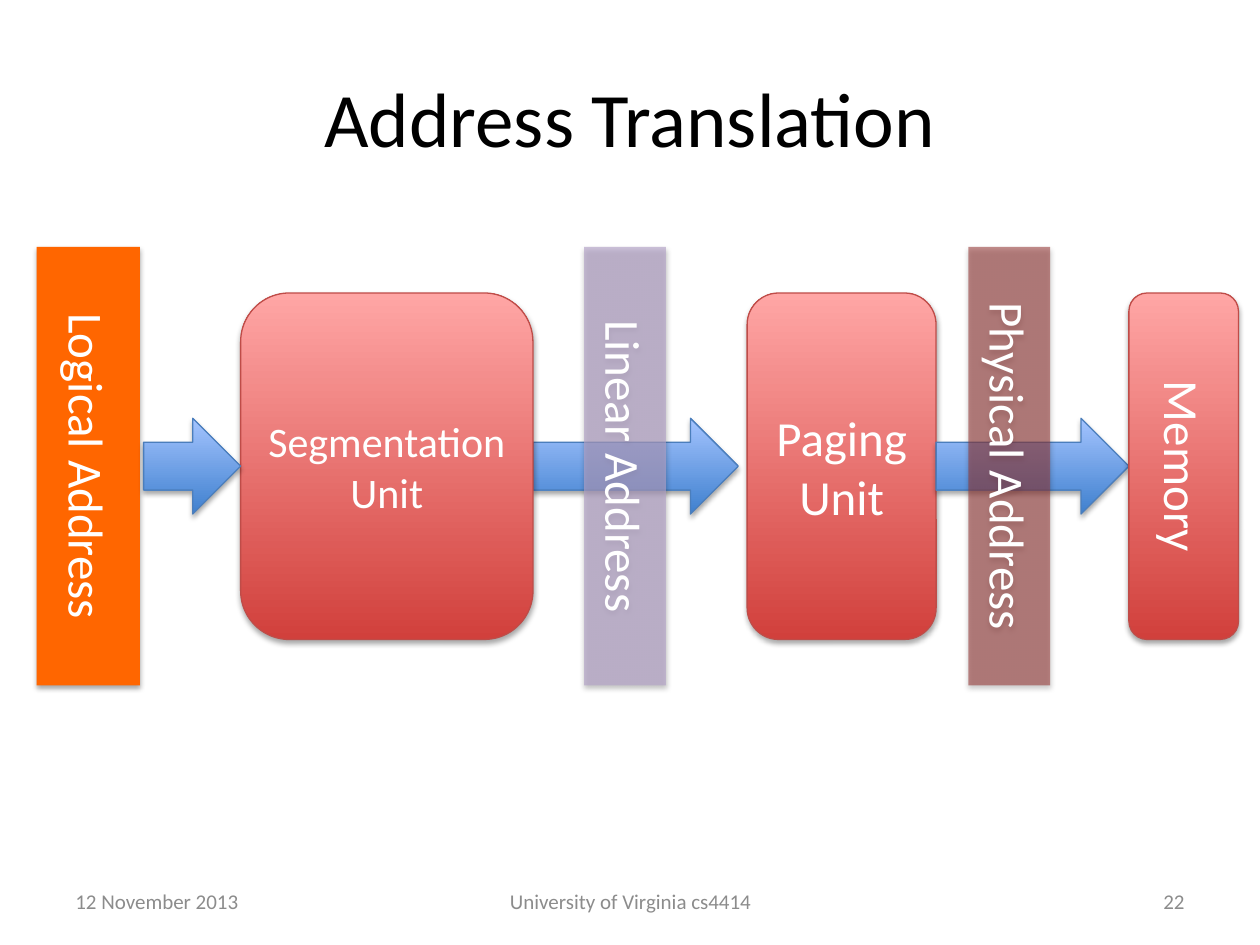
import pptx
import pptx.util
from lxml import etree
from pptx.dml.color import RGBColor
from pptx.enum.shapes import MSO_SHAPE
from pptx.enum.text import MSO_ANCHOR, PP_ALIGN
from pptx.oxml.ns import qn
from pptx.util import Inches, Pt

FONT = "Calibri"
BLACK = RGBColor(0x00, 0x00, 0x00)
WHITE = RGBColor(0xFF, 0xFF, 0xFF)
GREY = RGBColor(0x8C, 0x8C, 0x8C)
ORANGE = RGBColor(0xFF, 0x66, 0x00)
LILAC = RGBColor(0xB3, 0xA2, 0xC7)
MAROON = RGBColor(0x95, 0x37, 0x35)
BLUES = RGBColor(0x3F, 0x80, 0xCE), RGBColor(0xA4, 0xC4, 0xFF)
BLUE_EDGE = RGBColor(0x4B, 0x7E, 0xBC)
REDS = RGBColor(0xD1, 0x40, 0x3C), RGBColor(0xFF, 0xA6, 0xA5)
RED_EDGE = RGBColor(0xBF, 0x4C, 0x48)

MIDDLE = 3.7  # height of the line on which the whole diagram is centred


def write(shape, text, size, color, align=PP_ALIGN.CENTER):
    frame = shape.text_frame
    frame.word_wrap = True
    frame.vertical_anchor = MSO_ANCHOR.MIDDLE
    frame.text = text
    for para in frame.paragraphs:
        para.alignment = align
        para.font.name = FONT
        para.font.size = Pt(size)
        para.font.color.rgb = color


def add_shadow(shape):
    shape.shadow.inherit = False
    effects = shape._element.spPr.find(qn("a:effectLst"))
    shadow = etree.SubElement(
        effects, qn("a:outerShdw"), blurRad=str(Pt(3.1)), dist=str(Pt(1.8)),
        dir=str(90 * 60000), rotWithShape="0")
    color = etree.SubElement(shadow, qn("a:srgbClr"), val="000000")
    etree.SubElement(color, qn("a:alpha"), val="35000")


def add_block(page, kind, left, width, height, colors, edge):
    """Add a shaded, outlined shape centred on the diagram's middle line."""
    block = page.shapes.add_shape(
        kind, Inches(left), Inches(MIDDLE - height / 2), Inches(width), Inches(height))
    block.fill.gradient()
    block.fill.gradient_angle = 90
    for stop, color in zip(block.fill.gradient_stops, colors):
        stop.color.rgb = color
    block.line.color.rgb = edge
    block.line.width = Pt(0.75)
    add_shadow(block)
    return block


def add_arrow(page, left, width):
    add_block(page, MSO_SHAPE.RIGHT_ARROW, left, width, 0.76, BLUES, BLUE_EDGE)


def add_unit(page, left, width, text, size=28):
    unit = add_block(page, MSO_SHAPE.ROUNDED_RECTANGLE, left, width, 2.75, REDS, RED_EDGE)
    write(unit, text, size, WHITE)
    return unit


def add_address(page, center, thickness, text, color, opacity=100):
    """Add a bar turned a quarter, with its text reading downwards."""
    length = 3.48
    bar = page.shapes.add_shape(
        MSO_SHAPE.RECTANGLE, Inches(center - length / 2), Inches(MIDDLE - thickness / 2),
        Inches(length), Inches(thickness))
    bar.rotation = 90
    bar.fill.solid()
    bar.fill.fore_color.rgb = color
    if opacity < 100:
        fill_color = bar._element.spPr.find(qn("a:solidFill"))[0]
        etree.SubElement(fill_color, qn("a:alpha"), val=str(opacity * 1000))
    bar.line.fill.background()
    add_shadow(bar)
    write(bar, text, 28, WHITE)


def add_diagram(page):
    add_address(page, 0.7, 0.82, "Logical Address", ORANGE)
    add_arrow(page, 4.23, 1.63)
    add_unit(page, 1.91, 2.32, "Segmentation Unit", 24)
    add_address(page, 4.96, 0.65, "Linear Address", LILAC, 66)
    add_unit(page, 5.93, 1.5, "Paging\nUnit")
    add_arrow(page, 1.14, 0.77)
    add_arrow(page, 7.43, 1.53)
    add_address(page, 8.01, 0.65, "Physical Address", MAROON, 57)
    memory = add_unit(page, 8.96, 0.87, "Memory")
    memory.text_frame._txBody.bodyPr.set("vert", "vert")


def add_title(page):
    title = page.shapes.title
    title.left, title.top = Inches(0.5), Inches(0.3)
    title.width, title.height = Inches(9), Inches(1.25)
    write(title, "Address Translation", 44, BLACK)


def add_footer(page):
    for left, width, text, align in (
            (0.5, 2.33, "12 November 2013", PP_ALIGN.LEFT),
            (3.42, 3.17, "University of Virginia cs4414", PP_ALIGN.CENTER),
            (7.17, 2.33, "22", PP_ALIGN.RIGHT)):
        box = page.shapes.add_textbox(Inches(left), Inches(6.95), Inches(width), Inches(0.4))
        write(box, text, 12, GREY, align)


def main():
    deck = pptx.Presentation()
    deck.slide_width, deck.slide_height = Inches(10), Inches(7.5)
    page = deck.slides.add_slide(deck.slide_layouts.get_by_name("Title Only"))
    add_title(page)
    add_footer(page)
    add_diagram(page)
    deck.save("out.pptx")


if __name__ == "__main__":
    main()
